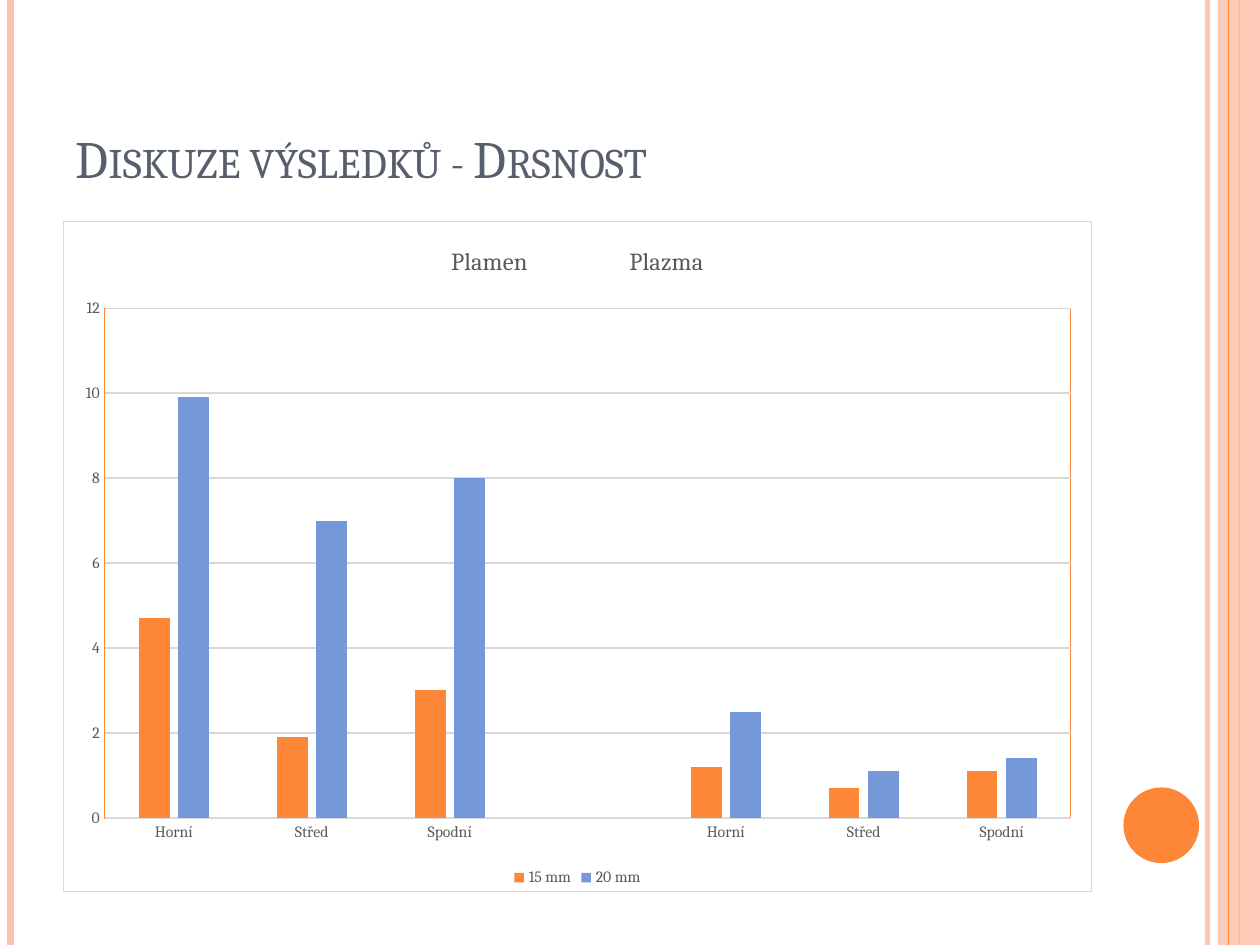
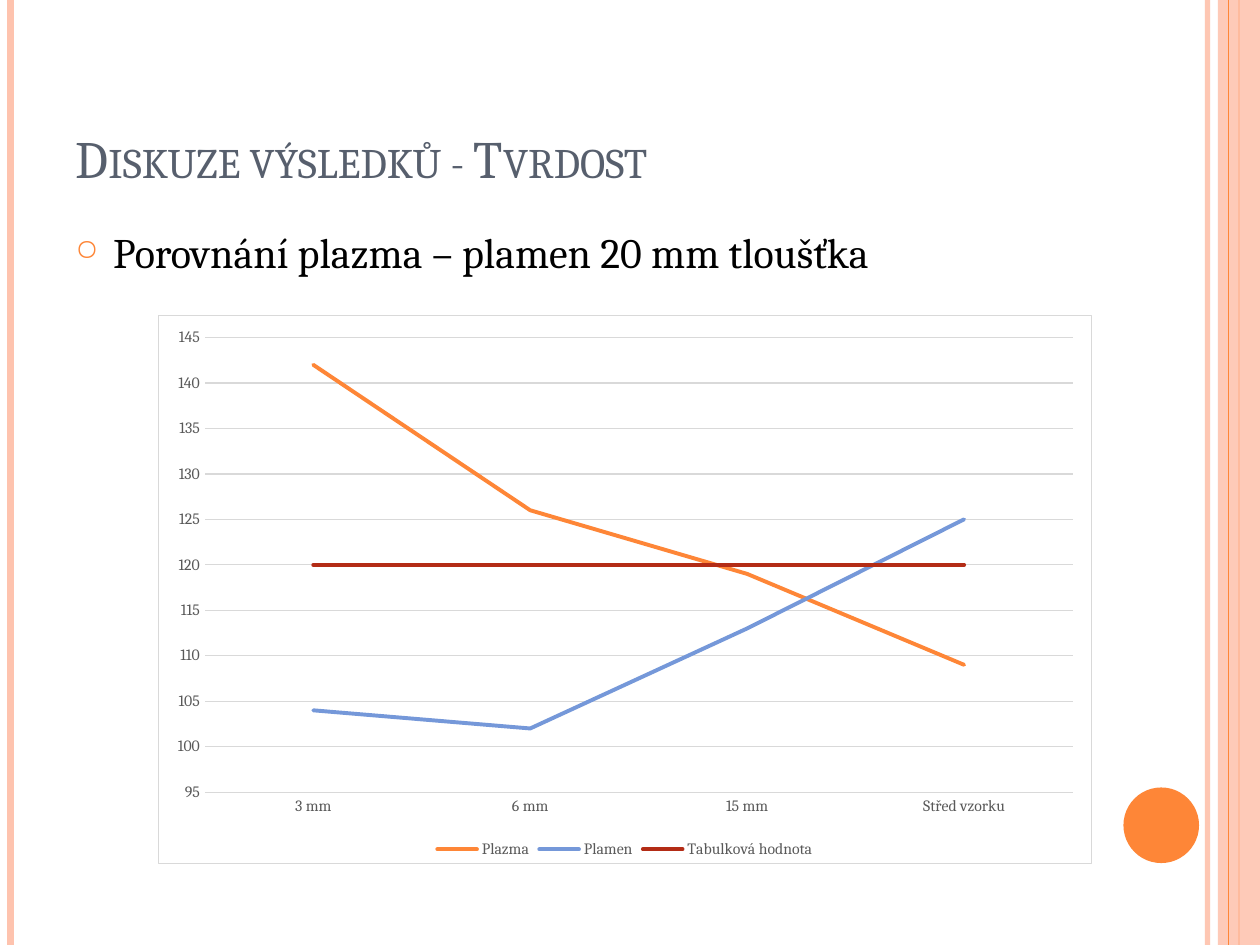
from dataclasses import dataclass
from typing import Optional

from lxml import etree
from pptx import Presentation
from pptx.chart.chart import Chart
from pptx.chart.data import CategoryChartData
from pptx.dml.color import RGBColor
from pptx.dml.fill import FillFormat
from pptx.enum.chart import XL_CHART_TYPE, XL_LEGEND_POSITION, XL_MARKER_STYLE, XL_TICK_MARK
from pptx.enum.shapes import MSO_CONNECTOR, MSO_SHAPE
from pptx.enum.text import MSO_ANCHOR, MSO_AUTO_SIZE, PP_ALIGN
from pptx.oxml import parse_xml
from pptx.oxml.ns import nsdecls, qn
from pptx.slide import Slide
from pptx.text.text import Font
from pptx.util import Inches, Length, Pt

COLUMN, LINE = XL_CHART_TYPE.COLUMN_CLUSTERED, XL_CHART_TYPE.LINE
LEGEND_BOTTOM = XL_LEGEND_POSITION.BOTTOM
NO_MARKER, NO_TICK = XL_MARKER_STYLE.NONE, XL_TICK_MARK.NONE
STRAIGHT = MSO_CONNECTOR.STRAIGHT
RECT, OVAL = MSO_SHAPE.RECTANGLE, MSO_SHAPE.OVAL
BOTTOM, LEFT, NO_FIT = MSO_ANCHOR.BOTTOM, PP_ALIGN.LEFT, MSO_AUTO_SIZE.NONE

ORANGE = RGBColor(0xFE, 0x86, 0x37)
PEACH = RGBColor(0xFE, 0xC3, 0xAE)
BLUE = RGBColor(0x75, 0x98, 0xD9)
RED = RGBColor(0xB3, 0x2C, 0x16)
SLATE = RGBColor(0x57, 0x5F, 0x6D)
GREY = RGBColor(0x59, 0x59, 0x59)
PALE = RGBColor(0xD9, 0xD9, 0xD9)
BLACK = RGBColor(0, 0, 0)
FONT = "Cambria"

# Grid of 120 columns by 90 rows
WIDTH, HEIGHT = Inches(10), Inches(7.5)
COLS, ROWS = 120, 90


@dataclass(frozen=True)
class Box:
    col: float
    row: float
    cols: float
    rows: float

    def lengths(self) -> tuple[Length, ...]:
        return (grid(self.col), grid(self.row), grid(self.cols), grid(self.rows))


@dataclass(frozen=True)
class Stripe:
    col: float
    color: RGBColor
    weight: float
    opacity: int = 100


@dataclass(frozen=True)
class Series:
    name: str
    values: tuple[Optional[float], ...]
    color: RGBColor


@dataclass(frozen=True)
class ChartSpec:
    kind: XL_CHART_TYPE
    box: Box
    plot: tuple[float, float, float, float]  # shares of the chart: x, y, w, h
    scale: tuple[float, float, float]  # minimum, maximum, step
    categories: tuple[str, ...]
    series: tuple[Series, ...]
    title: str = ""


TITLE_BOX = Box(6, 3.6, 98, 15)
BODY_BOX = Box(6, 21, 98, 64)
BAND_BOX = Box(116, 0, 4, ROWS)
DISC_BOX = Box(107, 75, 7.2, 7.2)
STRIPES_BELOW = (Stripe(115, PEACH, 3, 93), Stripe(1, PEACH, 4.5), Stripe(118, ORANGE, 1.5))
STRIPE_ABOVE = Stripe(117, ORANGE, 0.75)

LAYERS = ("Horní", "Střed", "Spodní")
ROUGHNESS = ChartSpec(
    COLUMN, BODY_BOX, (0.04, 0.13, 0.94, 0.76), (0, 12, 2), LAYERS + ("",) + LAYERS,
    (Series("15 mm", (4.7, 1.9, 3, None, 1.2, 0.7, 1.1), ORANGE),
     Series("20 mm", (9.9, 7, 8, None, 2.5, 1.1, 1.4), BLUE)),
    "Plamen\t\t\tPlazma")
HARDNESS = ChartSpec(
    LINE, Box(15, 30, 89, 52.3), (0.05, 0.04, 0.93, 0.83), (95, 145, 5),
    ("3 mm", "6 mm", "15 mm", "Střed vzorku"),
    (Series("Plazma", (142, 126, 119, 109), ORANGE),
     Series("Plamen", (104, 102, 113, 125), BLUE),
     Series("Tabulková hodnota", (120,) * 4, RED)))


def grid(units: float) -> Length:
    return Length(round(WIDTH * units / COLS))


def set_font(font: Font, size: float, color: RGBColor) -> None:
    font.name, font.size, font.bold = FONT, Pt(size), False
    font.color.rgb = color


def set_fill(fill: FillFormat, color: RGBColor, opacity: int = 100) -> None:
    fill.solid()
    fill.fore_color.rgb = color
    if opacity < 100:
        clr = fill._xPr.find(".//" + qn("a:srgbClr"))
        etree.SubElement(clr, qn("a:alpha"), val=str(opacity * 1000))


# Shared side decoration and title
def add_stripe(slide: Slide, stripe: Stripe) -> None:
    x = grid(stripe.col)
    sp = slide.shapes.add_connector(STRAIGHT, x, 0, x, HEIGHT)
    sp.line.width = Pt(stripe.weight)
    set_fill(sp.line.fill, stripe.color, stripe.opacity)
    etree.SubElement(sp._element.spPr, qn("a:effectLst"))


def add_plain_shape(slide: Slide, kind: MSO_SHAPE, box: Box, color: RGBColor,
                    opacity: int = 100) -> None:
    sp = slide.shapes.add_shape(kind, *box.lengths())
    sp.shadow.inherit = False
    sp.line.fill.background()
    set_fill(sp.fill, color, opacity)


def add_base_slide(prs: Presentation, title: str) -> Slide:
    slide = prs.slides.add_slide(prs.slide_layouts[5])
    for stripe in STRIPES_BELOW:
        add_stripe(slide, stripe)
    add_plain_shape(slide, RECT, BAND_BOX, PEACH, 87)
    add_stripe(slide, STRIPE_ABOVE)
    add_plain_shape(slide, OVAL, DISC_BOX, ORANGE)

    sp = slide.shapes.title
    sp.left, sp.top, sp.width, sp.height = TITLE_BOX.lengths()
    tf = sp.text_frame
    tf.auto_size, tf.vertical_anchor = NO_FIT, BOTTOM
    p = tf.paragraphs[0]
    p.alignment = LEFT
    r = p.add_run()
    r.text = title
    set_font(r.font, 30, SLATE)
    r._r.get_or_add_rPr().set("cap", "small")
    return slide


def add_bullet(slide: Slide, text: str) -> None:
    tf = slide.shapes.add_textbox(*BODY_BOX.lengths()).text_frame
    tf.word_wrap = True
    p = tf.paragraphs[0]
    p.space_before = Pt(6)
    pPr = p._p.get_or_add_pPr()
    indent = Inches(0.3)
    pPr.set("marL", str(indent))
    pPr.set("indent", str(-indent))
    color = etree.SubElement(pPr, qn("a:buClr"))
    etree.SubElement(color, qn("a:srgbClr"), val=str(ORANGE))
    etree.SubElement(pPr, qn("a:buSzPct"), val="70000")
    etree.SubElement(pPr, qn("a:buChar"), char="○")
    r = p.add_run()
    r.text = text
    set_font(r.font, 24, BLACK)


# Charts
def area_format(fill: str, border: RGBColor) -> etree._Element:
    return parse_xml(
        f'<c:spPr {nsdecls("c", "a")}>{fill}<a:ln w="{Pt(0.75)}"><a:solidFill>'
        f'<a:srgbClr val="{border}"/></a:solidFill></a:ln></c:spPr>')


def place_plot(chart: Chart, shares: tuple[float, ...]) -> None:
    area = chart._chartSpace.chart.plotArea
    for old in area.findall(qn("c:layout")):
        area.remove(old)
    layout = etree.Element(qn("c:layout"))
    manual = etree.SubElement(layout, qn("c:manualLayout"))
    settings = [("layoutTarget", "inner"), ("xMode", "edge"), ("yMode", "edge"),
                *zip("xywh", shares)]
    for tag, value in settings:
        etree.SubElement(manual, qn(f"c:{tag}"), val=str(value))
    area.insert(0, layout)


def format_axes(chart: Chart, spec: ChartSpec) -> None:
    cat, val = chart.category_axis, chart.value_axis
    for axis in (cat, val):
        axis.major_tick_mark = axis.minor_tick_mark = NO_TICK
        set_font(axis.tick_labels.font, 9, GREY)
    val.minimum_scale, val.maximum_scale, val.major_unit = spec.scale
    val.has_major_gridlines = True
    for line in (cat.format.line, val.major_gridlines.format.line):
        line.width = Pt(0.75)
        line.color.rgb = PALE
    if spec.kind == COLUMN:
        val.format.line.width = Pt(0.75)
        val.format.line.color.rgb = ORANGE
    else:
        val.format.line.fill.background()


def add_chart(slide: Slide, spec: ChartSpec) -> None:
    data = CategoryChartData()
    data.categories = spec.categories
    for series in spec.series:
        data.add_series(series.name, series.values)
    chart = slide.shapes.add_chart(spec.kind, *spec.box.lengths(), data).chart
    set_font(chart.font, 10, BLACK)
    chart._chartSpace.find(qn("c:txPr")).addprevious(
        area_format('<a:solidFill><a:srgbClr val="FFFFFF"/></a:solidFill>', PALE))

    chart.has_title = bool(spec.title)
    if spec.title:
        r = chart.chart_title.text_frame.paragraphs[0].add_run()
        r.text = spec.title
        set_font(r.font, 14, GREY)
        chart.chart_title.include_in_layout = False

    chart.has_legend = True
    chart.legend.position = LEGEND_BOTTOM
    chart.legend.include_in_layout = False
    set_font(chart.legend.font, 9, GREY)
    format_axes(chart, spec)
    place_plot(chart, spec.plot)

    plot = chart.plots[0]
    plot.vary_by_categories = False
    if spec.kind == COLUMN:
        plot.gap_width, plot.overlap = 219, -27
        chart._chartSpace.chart.plotArea.append(area_format("<a:noFill/>", ORANGE))
    for drawn, series in zip(plot.series, spec.series):
        if spec.kind == COLUMN:
            set_fill(drawn.format.fill, series.color)
        else:
            drawn.smooth = False
            drawn.marker.style = NO_MARKER
            line = drawn.format.line
            line.width = Pt(2.25)
            line.color.rgb = series.color
            line._ln.set("cap", "rnd")


def main() -> None:
    prs = Presentation()
    prs.slide_width, prs.slide_height = WIDTH, HEIGHT

    # Roughness
    slide = add_base_slide(prs, "Diskuze výsledků - Drsnost")
    add_chart(slide, ROUGHNESS)

    # Hardness
    slide = add_base_slide(prs, "Diskuze výsledků - Tvrdost")
    add_bullet(slide, "Porovnání plazma – plamen 20 mm tloušťka")
    add_chart(slide, HARDNESS)

    prs.save("out.pptx")


if __name__ == "__main__":
    main()
